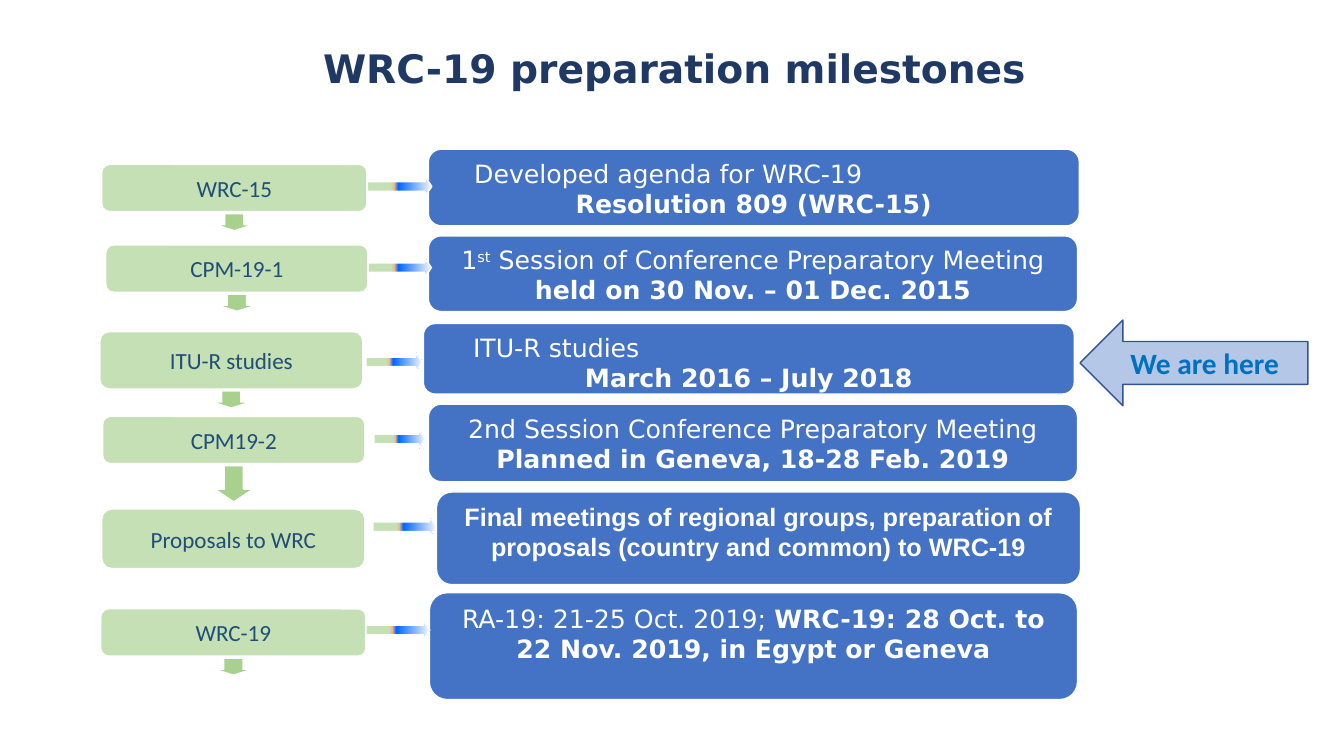
import pptx
import pptx.dml.color
import pptx.enum.shapes
import pptx.enum.text
import pptx.oxml.ns
import pptx.util
from lxml import etree

Pt = pptx.util.Pt
SHAPES = pptx.enum.shapes.MSO_SHAPE
ALIGN = pptx.enum.text.PP_ALIGN
ANCHOR = pptx.enum.text.MSO_ANCHOR
qn = pptx.oxml.ns.qn

WHITE, BLUE, GREEN, STEP_GREEN = "FFFFFF", "4472C4", "C5E0B4", "A9D18E"
TITLE = "WRC-19 preparation milestones"
HERE = "We are here"
# Colour stops of the link arrows, from tail to tip
LINK_STOPS = [(0, GREEN), (37, GREEN), (42, "F4B183"), (48, "0066FF"), (100, "F6F8FC")]
LINK_THICKNESS = 13.7
STEP_WIDTH, STEP_GAP = 27.4, 1.4

# stage, stage box, link arrow (left, middle, length), step arrow height,
# detail box, detail font, left indent of the first line (None = centred),
# detail lines made of (text, style) runs
MILESTONES = [
    ("WRC-15", (72.7, 117.4, 189.4, 33.8), (262.4, 133.2, 46.1), 12.2,
     (306, 106.6, 465, 54.7), "DejaVu Sans", 23,
     [[("Developed agenda for WRC-19", "")], [("Resolution 809 (WRC-15)", "bold")]]),
    ("CPM-19-1", (75.6, 175, 187.2, 33.8), (262.8, 191.2, 45.4), 12.2,
     (306, 168.5, 463.7, 54), "DejaVu Sans", None,
     [[("1", ""), ("st", "super"), (" Session of Conference Preparatory Meeting", "")],
      [("held on 30 Nov. – 01 Dec. 2015", "bold")]]),
    ("ITU-R studies", (71.3, 236.9, 187.9, 41), (261.4, 258.5, 40.3), 12.2,
     (302.4, 231.1, 465, 50.4), "DejaVu Sans", 26,
     [[("ITU-R studies", "")], [("March 2016 – July 2018", "bold")]]),
    ("CPM19-2", (73.4, 297.4, 187.2, 33.8), (267.1, 313.6, 36.7), 25.9,
     (306, 288.7, 463.7, 55.4), "DejaVu Sans", None,
     [[("2nd Session Conference Preparatory Meeting", "")],
      [("Planned in Geneva, 18-28 Feb. 2019", "bold")]]),
    ("Proposals to WRC", (72.7, 363.6, 187.9, 42.5), (266.4, 376.2, 45.4), None,
     (311.8, 351.4, 460, 66.2), "Arial", None,
     [[("Final meetings of regional groups, preparation of proposals "
        "(country and common) to WRC-19", "bold")]]),
    ("WRC-19", (72, 434.9, 189.4, 33.8), (261, 450, 46.1), 12.2,
     (306.7, 423.4, 463, 76.3), "DejaVu Sans", None,
     [[("RA-19: 21-25 Oct. 2019; ", ""), ("WRC-19: 28 Oct. to", "bold")],
      [("22 Nov. 2019, in Egypt or Geneva", "bold")]]),
]


def rgb(value):
    return pptx.dml.color.RGBColor.from_string(value)


def style_font(font, name, size, color, bold=False):
    font.name, font.size, font.bold = name, Pt(size), bold
    font.color.rgb = rgb(color)


def add_shape(slide, kind, box, fill, line=WHITE):
    shape = slide.shapes.add_shape(kind, *(Pt(length) for length in box))
    shape.shadow.inherit = False
    shape.fill.solid()
    shape.fill.fore_color.rgb = rgb(fill)
    shape.line.color.rgb = rgb(line)
    shape.line.width = Pt(1)
    return shape


def add_label(shape, text, size, color, bold=False):
    """Write one centred line into a shape."""
    shape.text_frame.text = text
    shape.text_frame.vertical_anchor = ANCHOR.MIDDLE
    paragraph = shape.text_frame.paragraphs[0]
    paragraph.alignment = ALIGN.CENTER
    style_font(paragraph.runs[0].font, "Calibri", size, color, bold)


def add_detail(slide, box, font_name, indent, lines):
    detail = add_shape(slide, SHAPES.ROUNDED_RECTANGLE, box, BLUE)
    frame = detail.text_frame
    frame.vertical_anchor = ANCHOR.TOP
    for number, runs in enumerate(lines):
        paragraph = frame.add_paragraph() if number else frame.paragraphs[0]
        paragraph.alignment = ALIGN.CENTER
        if indent and number == 0:
            paragraph.alignment = ALIGN.LEFT
            properties = paragraph._p.get_or_add_pPr()
            properties.set("marL", str(Pt(indent)))
            properties.set("indent", "0")
        for text, style in runs:
            run = paragraph.add_run()
            run.text = text
            style_font(run.font, font_name, 18, WHITE, style == "bold")
            if style == "super":
                run._r.get_or_add_rPr().set("baseline", "30000")


def add_link(slide, left, middle, length):
    """Draw the gradient arrow from a stage to its detail."""
    box = (left, middle - LINK_THICKNESS / 2, length, LINK_THICKNESS)
    link = add_shape(slide, SHAPES.RIGHT_ARROW, box, GREEN)
    link.adjustments[1] = 0.35
    link.fill.gradient()
    link.fill.gradient_angle = 0
    stops = link.element.spPr.find(qn("a:gradFill")).find(qn("a:gsLst"))
    for stop in list(stops):
        stops.remove(stop)
    for position, color in LINK_STOPS:
        stop = etree.SubElement(stops, qn("a:gs"), pos=str(position * 1000))
        etree.SubElement(stop, qn("a:srgbClr"), val=color)


def add_step(slide, stage_box, height):
    """Draw the arrow that leads down from a stage."""
    left, top, width, stage_height = stage_box
    box = (left + (width - STEP_WIDTH) / 2, top + stage_height + STEP_GAP, STEP_WIDTH, height)
    step = add_shape(slide, SHAPES.DOWN_ARROW, box, STEP_GREEN)
    step.adjustments[1] = 0.35


def main():
    deck = pptx.Presentation()
    deck.slide_width, deck.slide_height = Pt(960), Pt(540)
    slide = deck.slides.add_slide(deck.slide_layouts[5])

    title = slide.shapes.title
    title.left, title.top, title.width, title.height = Pt(143.3), Pt(28), Pt(676.8), Pt(41)
    title.text_frame.text = TITLE
    title.text_frame.auto_size = pptx.enum.text.MSO_AUTO_SIZE.NONE
    title.text_frame.vertical_anchor = ANCHOR.MIDDLE
    heading = title.text_frame.paragraphs[0]
    heading.alignment = ALIGN.CENTER
    style_font(heading.runs[0].font, "DejaVu Sans", 28, "203864", True)

    for name, stage_box, link, step_height, detail_box, font_name, indent, lines in MILESTONES:
        add_detail(slide, detail_box, font_name, indent, lines)
        add_link(slide, *link)
        stage = add_shape(slide, SHAPES.ROUNDED_RECTANGLE, stage_box, GREEN)
        add_label(stage, name, 16.5, "1F4E79")
        if step_height:
            add_step(slide, stage_box, step_height)

    here = add_shape(slide, SHAPES.LEFT_ARROW, (771.5, 228.6, 162.7, 61.2), "B4C7E7", "325491")
    add_label(here, HERE, 21, "0070C0", True)

    deck.save("out.pptx")


if __name__ == "__main__":
    main()
